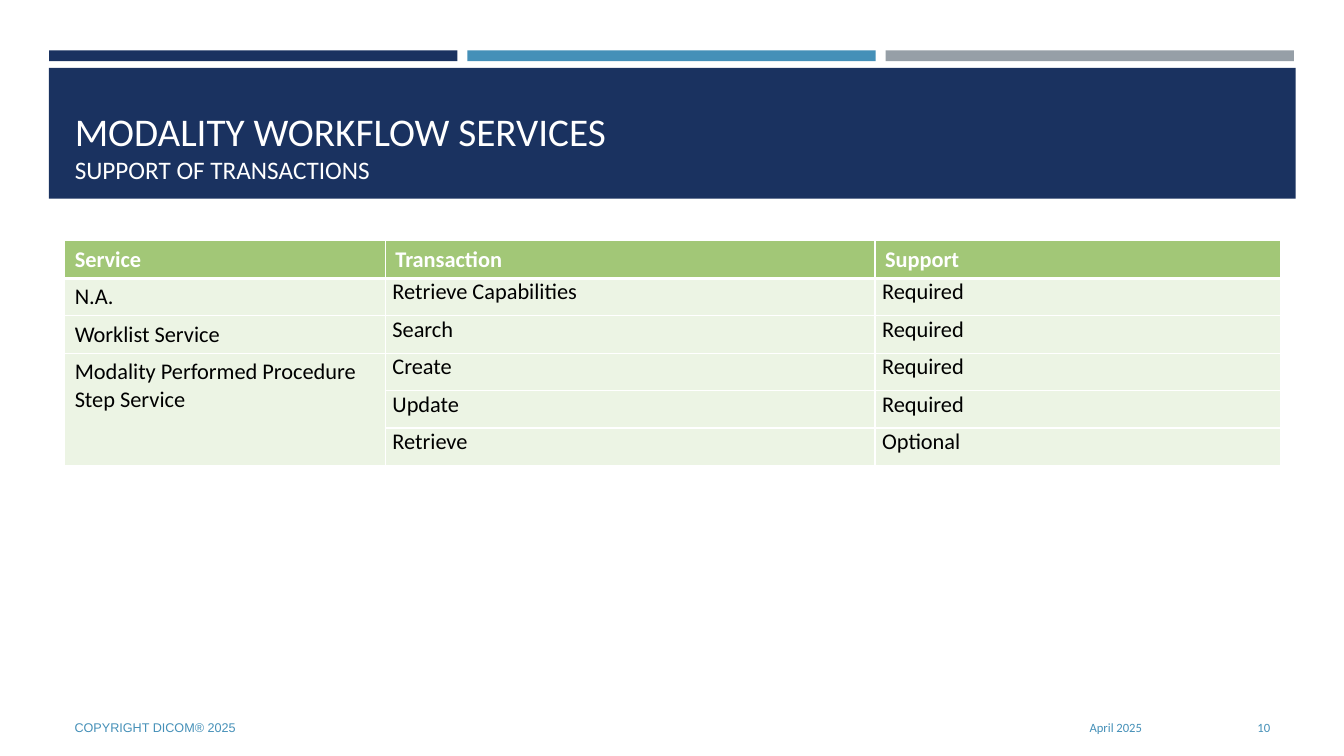
from lxml.etree import SubElement
from pptx import Presentation
from pptx.dml.color import RGBColor
from pptx.enum.shapes import MSO_SHAPE
from pptx.enum.text import MSO_ANCHOR as Anchor, MSO_AUTO_SIZE as AutoSize, PP_ALIGN as Align
from pptx.oxml.ns import qn
from pptx.util import Cm, Pt

NAVY, BLUE, GRAY = "1A3260", "4590B8", "969FA7"
WHITE, BLACK = "FFFFFF", "000000"
HEADER_GREEN, BODY_GREEN = "A2C777", "ECF4E4"
MARGIN, CONTENT_WIDTH = 1.63, 30.63

HEADERS = ["Service", "Transaction", "Support"]
SERVICES = [
    ("N.A.", [("Retrieve Capabilities", "Required")]),
    ("Worklist Service", [("Search", "Required")]),
    ("Modality Performed Procedure Step Service",
     [("Create", "Required"), ("Update", "Required"), ("Retrieve", "Optional")]),
]
COLUMN_WIDTHS = [8.08, 12.34, 10.21]
ROW_HEIGHT = 0.94


def set_fill(target, color):
    target.fill.solid()
    target.fill.fore_color.rgb = RGBColor.from_string(color)


def format_run(run, size, color, font="Calibri", bold=False):
    run.font.size = Pt(size)
    run.font.name = font
    run.font.bold = bold
    run.font.color.rgb = RGBColor.from_string(color)


def add_bar(slide, left, top, width, height, color):
    bar = slide.shapes.add_shape(
        MSO_SHAPE.RECTANGLE, Cm(left), Cm(top), Cm(width), Cm(height))
    bar.shadow.inherit = False
    set_fill(bar, color)
    bar.line.fill.background()


def set_title(slide, lines):
    title = slide.shapes.title
    title.left, title.top = Cm(MARGIN), Cm(1.96)
    title.width, title.height = Cm(CONTENT_WIDTH), Cm(2.82)
    frame = title.text_frame
    frame.auto_size = AutoSize.NONE
    frame.vertical_anchor = Anchor.BOTTOM
    frame.text = "\v".join(text for text, size in lines)
    paragraph = frame.paragraphs[0]
    paragraph.alignment = Align.LEFT
    for run, (text, size) in zip(paragraph.runs, lines):
        format_run(run, size, WHITE)


def add_footer(slide, text, left, width, alignment, font="Calibri"):
    box = slide.shapes.add_textbox(Cm(left), Cm(17.83), Cm(width), Cm(1.02))
    frame = box.text_frame
    frame.word_wrap = True
    frame.vertical_anchor = Anchor.MIDDLE
    frame.text = text
    paragraph = frame.paragraphs[0]
    paragraph.alignment = alignment
    format_run(paragraph.runs[0], 9, BLUE, font)


def set_borders(cell, top, bottom):
    properties = cell._tc.get_or_add_tcPr()
    for side, width in zip("LRTB", (1, 1, top, bottom)):
        line = SubElement(properties, qn(f"a:ln{side}"), w=str(Pt(width)))
        fill = SubElement(line, qn("a:solidFill"))
        SubElement(fill, qn("a:srgbClr"), val=WHITE)


def fill_cell(cell, text, color, bold=False):
    cell.text = text
    for run in cell.text_frame.paragraphs[0].runs:
        format_run(run, 16, color, bold=bold)


def add_services_table(slide):
    row_count = 1 + sum(len(transactions) for name, transactions in SERVICES)
    table = slide.shapes.add_table(
        row_count, len(HEADERS), Cm(MARGIN), Cm(6.07),
        Cm(CONTENT_WIDTH), Cm(ROW_HEIGHT * row_count)).table
    for column, width in zip(table.columns, COLUMN_WIDTHS):
        column.width = Cm(width)
    for index, row in enumerate(table.rows):
        row.height = Cm(ROW_HEIGHT)
        for cell in row.cells:
            set_borders(cell, 3 if index == 1 else 1, 3 if index == 0 else 1)
            set_fill(cell, BODY_GREEN if index else HEADER_GREEN)
    for column, header in enumerate(HEADERS):
        fill_cell(table.cell(0, column), header, WHITE, bold=True)
    row = 1
    for service, transactions in SERVICES:
        service_cell = table.cell(row, 0)
        fill_cell(service_cell, service, BLACK)
        if len(transactions) > 1:
            service_cell.merge(table.cell(row + len(transactions) - 1, 0))
        for transaction in transactions:
            for column, text in enumerate(transaction, 1):
                cell = table.cell(row, column)
                cell.margin_left = cell.margin_right = Cm(0.18)
                cell.margin_top = cell.margin_bottom = 0
                fill_cell(cell, text, BLACK)
            row += 1


def main():
    presentation = Presentation()
    presentation.slide_width, presentation.slide_height = Cm(33.87), Cm(19.05)
    slide = presentation.slides.add_slide(presentation.slide_layouts[5])
    for index, color in enumerate([NAVY, BLUE, GRAY]):
        add_bar(slide, 1.24 + 10.54 * index, 1.27, 10.29, 0.27, color)
    add_bar(slide, 1.23, 1.71, 31.42, 3.3, NAVY)
    title = slide.shapes.title._element
    title.getparent().append(title)
    set_title(slide, [("MODALITY WORKFLOW SERVICES", 28),
                      ("SUPPORT OF TRANSACTIONS", 18)])
    add_services_table(slide)
    add_footer(slide, "April 2025", 21.13, 7.9, Align.RIGHT)
    add_footer(slide, "COPYRIGHT DICOM® 2025", MARGIN, 19.2, Align.LEFT, "Arial")
    add_footer(slide, "10", 29.34, 2.92, Align.RIGHT)
    presentation.save("out.pptx")


if __name__ == "__main__":
    main()
